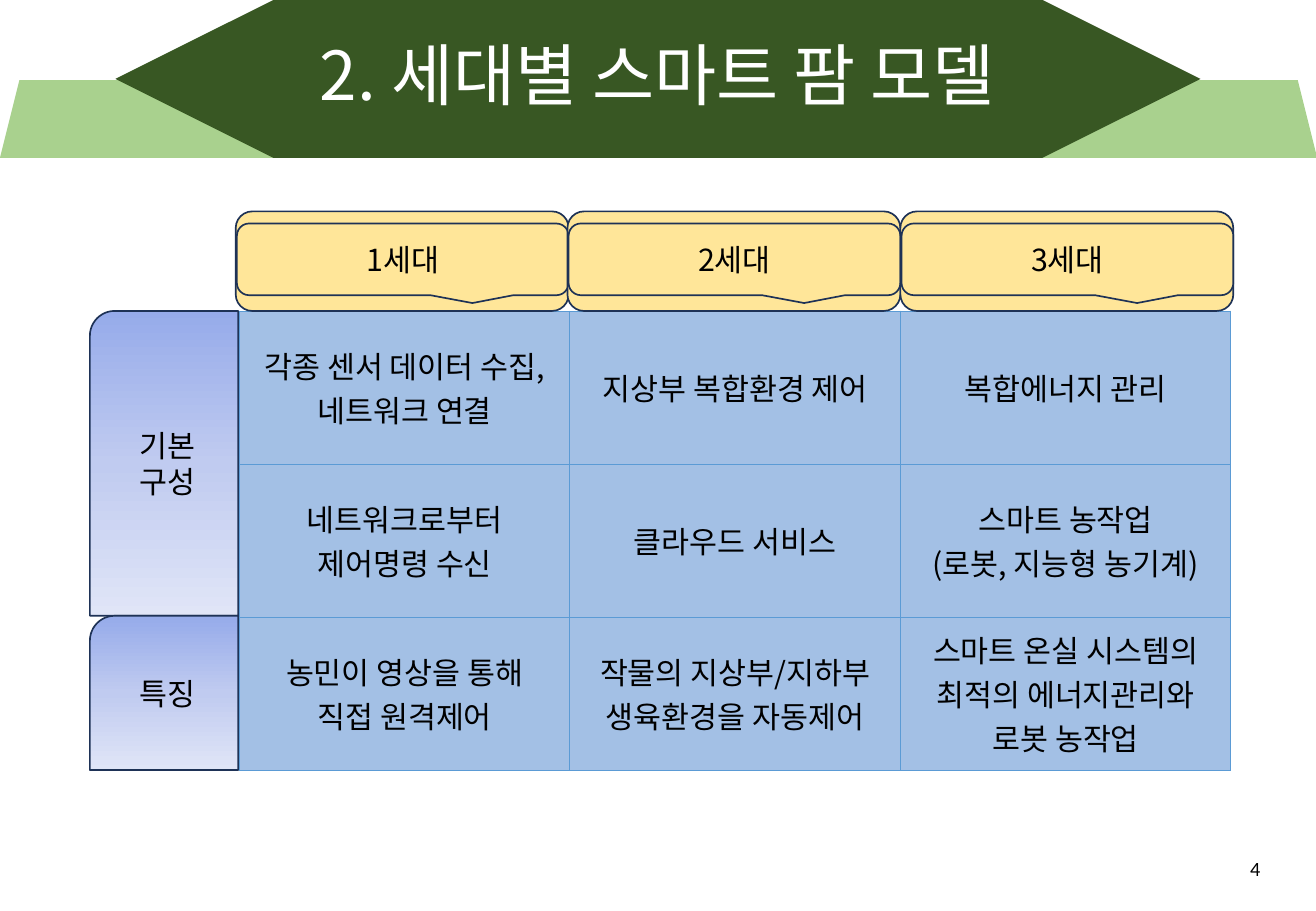
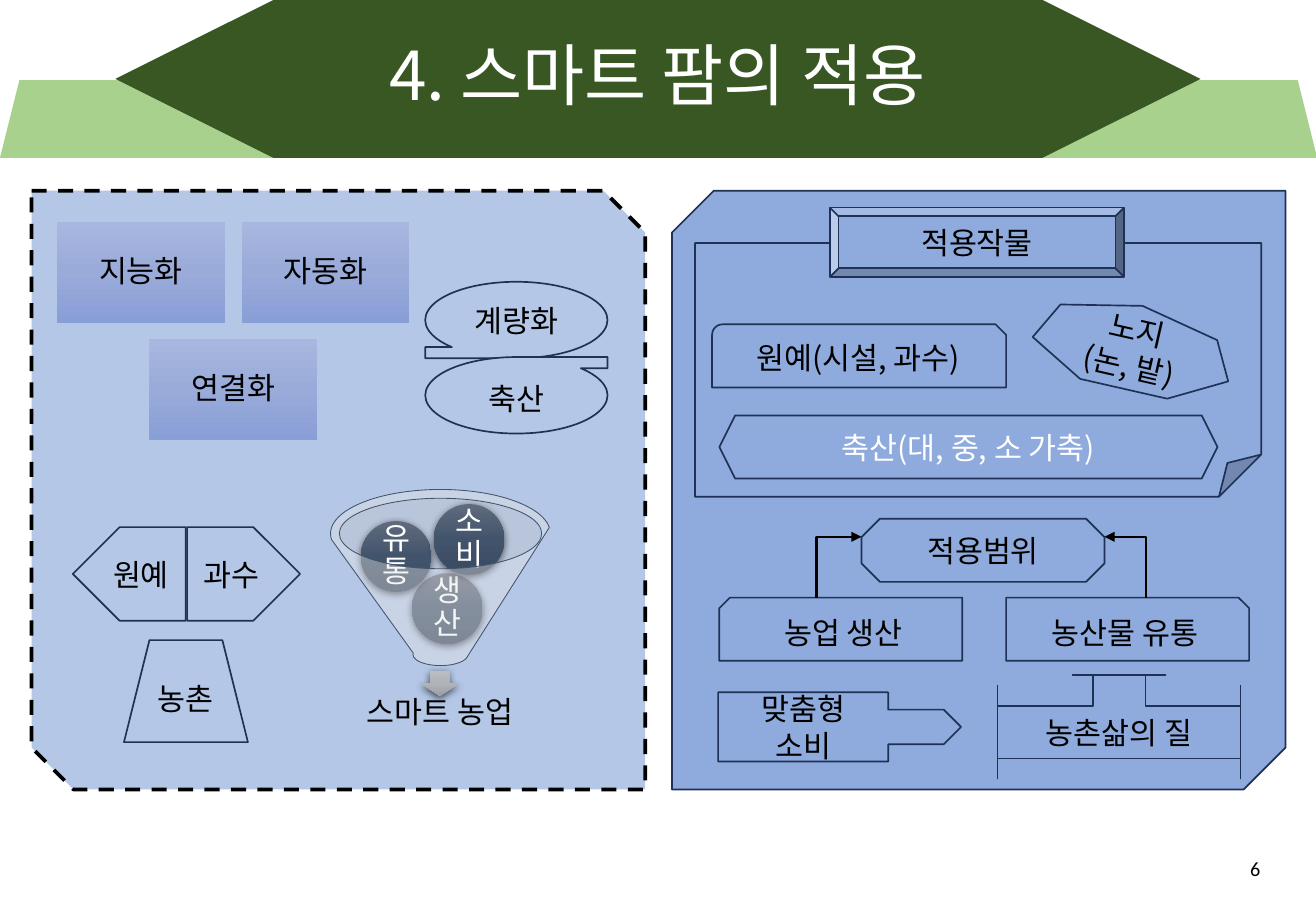
import pptx
import pptx.util
import pptx.dml.color
import pptx.enum.dml
import pptx.enum.shapes
import pptx.enum.text
import pptx.oxml
import pptx.oxml.ns

PX = 9144  # 100 px to the inch
MSO = pptx.enum.shapes.MSO_SHAPE
ALIGN = pptx.enum.text.PP_ALIGN
MIDDLE = pptx.enum.text.MSO_ANCHOR.MIDDLE
RGB = pptx.dml.color.RGBColor.from_string
qn = pptx.oxml.ns.qn
NS = pptx.oxml.ns.nsdecls("a")
FONT = "Noto Sans CJK KR"
C = {
    "band": "A9D18E", "title": "385723", "black": "000000", "white": "FFFFFF",
    "navy": "1E3256", "yellow": "FFE699", "cell": "A3C0E5", "grid": "5B9BD5",
    "blue": "8FAADC", "pale": "B4C7E7", "rim": "C1C3C7", "glass": "E7E6E6",
    "slate": "44546A",
}
GRAD = {
    "row": ("96ABEA", "C0CBF0", "E0E5F7"),
    "tile": ("A8B7DF", "9AABD9", "889ED7"),
    "arrow": ("BABDC2", "B0B3BA", "9C9FA6"),
    "ball": ("606B7D", "42546C", "394A62"),
}


def write(tf, text, size=18, color="black", align=ALIGN.CENTER, font=FONT, ls=None):
    """Fill a text frame; a newline starts a paragraph, a vertical tab a line."""
    for i, line in enumerate(text.split("\n")):
        p = tf.add_paragraph() if i else tf.paragraphs[0]
        p.text = line
        p.alignment = align
        if ls:
            p.line_spacing = ls
        p.font.size = pptx.util.Pt(size)
        p.font.name = font
        p.font.color.rgb = RGB(C[color])
        latin = p.font._element.find(qn("a:latin"))
        latin.addnext(pptx.oxml.parse_xml(f'<a:ea {NS} typeface="{font}"/>'))


def add(s, kind, box, fill=None, line="navy", text="", width=1, adj=(), flip=None,
        alpha=None, shadow=False, inset=None, **style):
    """Add a preset shape, or a text box when kind is None."""
    box = [v * PX for v in box]
    sp = s.shapes.add_shape(kind, *box) if kind else s.shapes.add_textbox(*box)
    spPr = sp._element.spPr
    if kind:
        sp.shadow.inherit = False
        for i, v in enumerate(adj):
            sp.adjustments[i] = v
        if fill in GRAD:
            stops = "".join(f'<a:gs pos="{i * 50000}"><a:srgbClr val="{c}"/></a:gs>'
                            for i, c in enumerate(GRAD[fill]))
            sp.fill.background()
            spPr.replace(spPr.find(qn("a:noFill")), pptx.oxml.parse_xml(
                f'<a:gradFill {NS}><a:gsLst>{stops}</a:gsLst>'
                '<a:lin ang="5400000" scaled="0"/></a:gradFill>'))
        else:
            sp.fill.solid()
            sp.fill.fore_color.rgb = RGB(C[fill])
        if alpha:
            spPr.find(qn("a:solidFill"))[0].append(
                pptx.oxml.parse_xml(f'<a:alpha {NS} val="{alpha * 1000}"/>'))
        if line:
            sp.line.color.rgb = RGB(C[line])
            sp.line.width = pptx.util.Pt(width)
        else:
            sp.line.fill.background()
        if flip:
            spPr.find(qn("a:xfrm")).set(flip, "1")
        if shadow:
            spPr.find(qn("a:effectLst")).append(pptx.oxml.parse_xml(
                f'<a:outerShdw {NS} blurRad="57150" dist="19050" dir="5400000">'
                '<a:srgbClr val="000000"><a:alpha val="63000"/></a:srgbClr></a:outerShdw>'))
    if text:
        tf = sp.text_frame
        tf.word_wrap = True
        tf.vertical_anchor = MIDDLE
        if inset is not None:
            tf.margin_left = tf.margin_right = tf.margin_top = tf.margin_bottom = inset * PX
        write(tf, text, **style)
    return sp


prs = pptx.Presentation()
prs.slide_width, prs.slide_height = 1083 * PX, 750 * PX

# Title band and page number on every slide
for title, number in (("2. 세대별 스마트 팜 모델", "4"), ("4. 스마트 팜의 적용", "6")):
    s = prs.slides.add_slide(prs.slide_layouts[6])
    add(s, MSO.TRAPEZOID, (0, 66, 1084, 64), "band", None)
    add(s, MSO.HEXAGON, (95, 0, 893, 130), "title", None, adj=(1,))
    add(s, None, (74, 0, 934, 130), text=title, size=40, color="white", ls=0.9)
    add(s, None, (803, 695, 244, 40), text=number, size=12, align=ALIGN.RIGHT,
        font="Calibri")
model, use = prs.slides

# Slide 1: table of generations
rows = (
    ("각종 센서 데이터 수집, 네트워크 연결", "지상부 복합환경 제어", "복합에너지 관리"),
    ("네트워크로부터\n제어명령 수신", "클라우드 서비스", "스마트 농작업\n(로봇, 지능형 농기계)"),
    ("농민이 영상을 통해\n직접 원격제어", "작물의 지상부/지하부 생육환경을 자동제어",
     "스마트 온실 시스템의 최적의 에너지관리와 로봇 농작업"),
)
table = model.shapes.add_table(3, 3, 197 * PX, 256 * PX, 816 * PX, 378 * PX).table
table.first_row = table.horz_banding = False
for r, row in enumerate(rows):
    table.rows[r].height = 126 * PX
    for c, text in enumerate(row):
        table.columns[c].width = 272 * PX
        cell = table.cell(r, c)
        cell.vertical_anchor = MIDDLE
        cell.fill.solid()
        cell.fill.fore_color.rgb = RGB(C["cell"])
        write(cell.text_frame, text)
        for i, side in enumerate(("lnL", "lnR", "lnT", "lnB")):
            cell._tc.get_or_add_tcPr().insert(i, pptx.oxml.parse_xml(
                f'<a:{side} {NS} w="6350"><a:solidFill><a:srgbClr val="{C["grid"]}"/>'
                f'</a:solidFill></a:{side}>'))

# Slide 1: column and row headings
for i in range(3):
    x = 194 + 547 * i // 2
    add(model, MSO.ROUNDED_RECTANGLE, (x, 174, 274, 82), "yellow")
    add(model, MSO.ROUNDED_RECTANGULAR_CALLOUT, (x + 1, 184, 273, 59), "yellow",
        text=f"{i + 1}세대", adj=(0.21, 0.61, 0.17))
for y, h, text in ((256, 251, "기본 구성"), (507, 127, "특징")):
    add(model, MSO.ROUND_1_RECTANGLE, (74, y, 122, h), "row", text=text, flip="flipH")

# Slide 2, right panel: crops and scope
add(use, MSO.SNIP_2_DIAG_RECTANGLE, (553, 157, 505, 493), "blue", adj=(0, 0.07), flip="flipH")
add(use, MSO.FOLDED_CORNER, (572, 200, 466, 209), "blue")
for kind, box, text, extra in (
    (MSO.BEVEL, (683, 171, 242, 57), "적용작물", {}),
    (MSO.SNIP_ROUND_RECTANGLE, (586, 267, 242, 52), "원예(시설, 과수)", {}),
    (MSO.HEXAGON, (592, 342, 410, 52), "축산(대, 중, 소 가축)", {"color": "white"}),
    (MSO.OCTAGON, (709, 427, 200, 52), "적용범위", {}),
    (MSO.SNIP_1_RECTANGLE, (828, 492, 200, 52), "농산물 유통", {}),
    (MSO.SNIP_1_RECTANGLE, (592, 492, 200, 52), "농업 생산", {"flip": "flipH"}),
    (MSO.RIGHT_ARROW_CALLOUT, (591, 570, 200, 57), "맞춤형 소비",
     {"adj": (0.5, 0.25, 0.25, 0.7)}),
    (MSO.LEFT_RIGHT_UP_ARROW, (821, 556, 200, 85), "농촌삶의 질",
     {"adj": (0.51, 0.45, 0)}),
):
    add(use, kind, box, "blue", text=text, **extra)
field = add(use, MSO.HEPTAGON, (850, 251, 165, 70), "blue", text="노지\n(논, 밭)")
field.rotation = 12.8

# Slide 2, right panel: elbow arrows into the scope box
for x1, x2 in ((709, 672), (909, 943)):
    cn = use.shapes.add_connector(pptx.enum.shapes.MSO_CONNECTOR.ELBOW,
                                  x1 * PX, 442 * PX, x2 * PX, 492 * PX)
    cn.line.color.rgb = RGB(C["black"])
    cn.line.width = pptx.util.Pt(1.5)
    spPr = cn._element.spPr
    spPr.find(qn("a:prstGeom")).set("prst", "bentConnector2")
    spPr.find(qn("a:ln")).append(pptx.oxml.parse_xml(f'<a:headEnd {NS} type="triangle"/>'))
    spPr.append(pptx.oxml.parse_xml(f"<a:effectLst {NS}/>"))

# Slide 2, left panel: farm types
panel = add(use, MSO.SNIP_2_DIAG_RECTANGLE, (26, 157, 505, 493), "pale", "black",
            width=2.25, adj=(0, 0.07))
panel.line.dash_style = pptx.enum.dml.MSO_LINE.DASH
TAPE = MSO.FLOWCHART_SEQUENTIAL_ACCESS_STORAGE
for kind, box, text, flip in (
    (TAPE, (350, 232, 150, 63), "계량화", "flipH"),
    (MSO.PENTAGON, (154, 434, 93, 77), "과수", None),
    (MSO.TRAPEZOID, (102, 527, 102, 84), "농촌", None),
    (TAPE, (350, 294, 150, 63), "", "flipV"),
    (MSO.PENTAGON, (60, 434, 93, 77), "원예", "flipH"),
):
    add(use, kind, box, "pale", text=text, flip=flip)
add(use, None, (392, 308, 83, 40), text="축산", align=ALIGN.LEFT)

# Slide 2, left panel: three goals
for x, y, text in ((47, 183, "지능화"), (199, 183, "자동화"), (123, 279, "연결화")):
    add(use, MSO.RECTANGLE, (x, y, 138, 83), "tile", None, text, inset=7, ls=0.9)

# Slide 2, left panel: funnel
add(use, MSO.OVAL, (278, 410, 166, 58), "rim", None, alpha=40)
add(use, MSO.DOWN_ARROW, (346, 552, 32, 21), "arrow", None, shadow=True)
add(use, None, (277, 568, 170, 39), text="스마트 농업", inset=14, ls=0.9)
for x, y, text in ((339, 472, "생\v산"), (297, 429, "유\v통"), (357, 415, "소\v비")):
    add(use, MSO.OVAL, (x, y, 58, 58), "ball", None, text, shadow=True, inset=3,
        color="white", ls=0.9)
add(use, MSO.FUNNEL, (272, 403, 181, 145), "glass", "slate", width=0.5, alpha=40)

prs.save("out.pptx")
